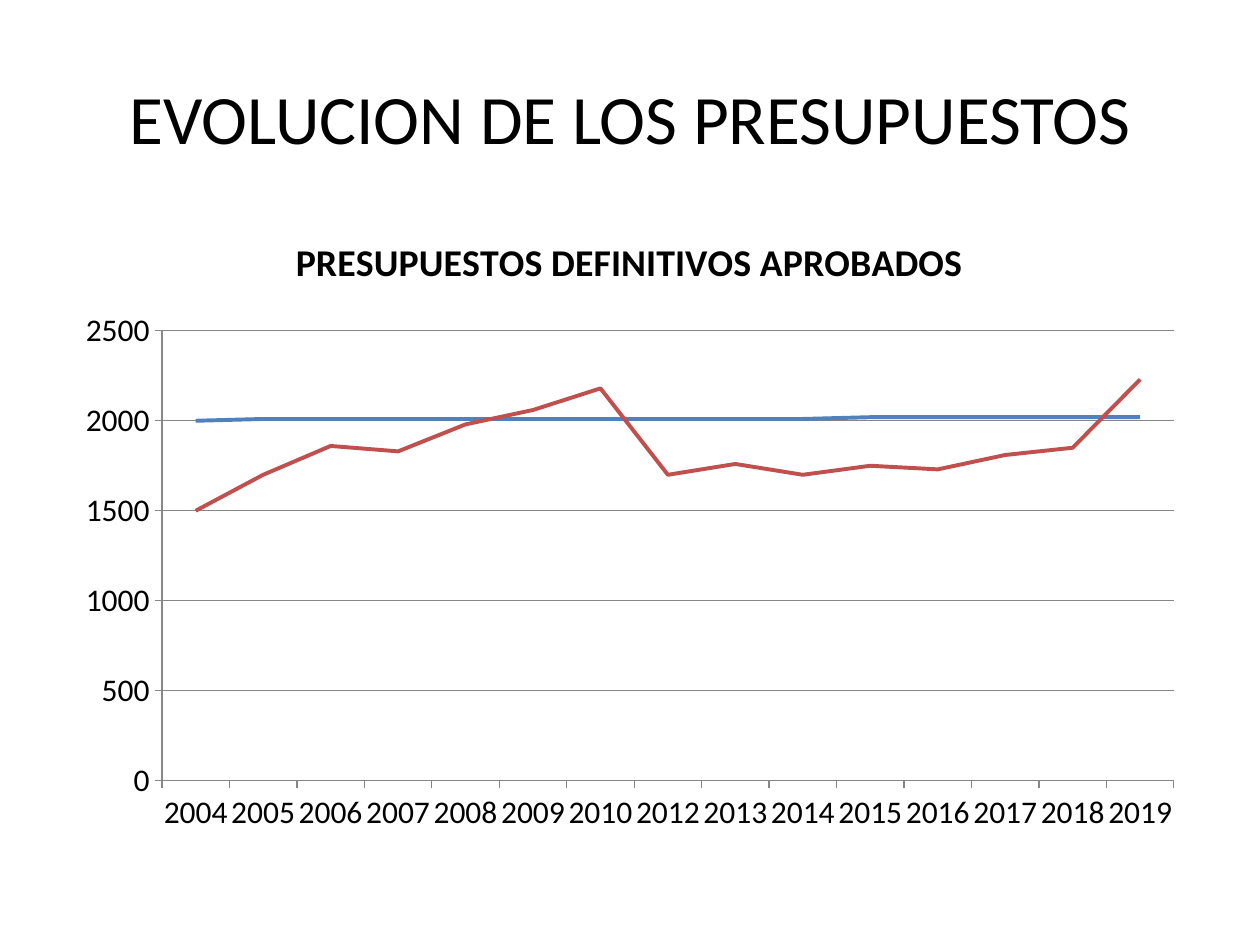
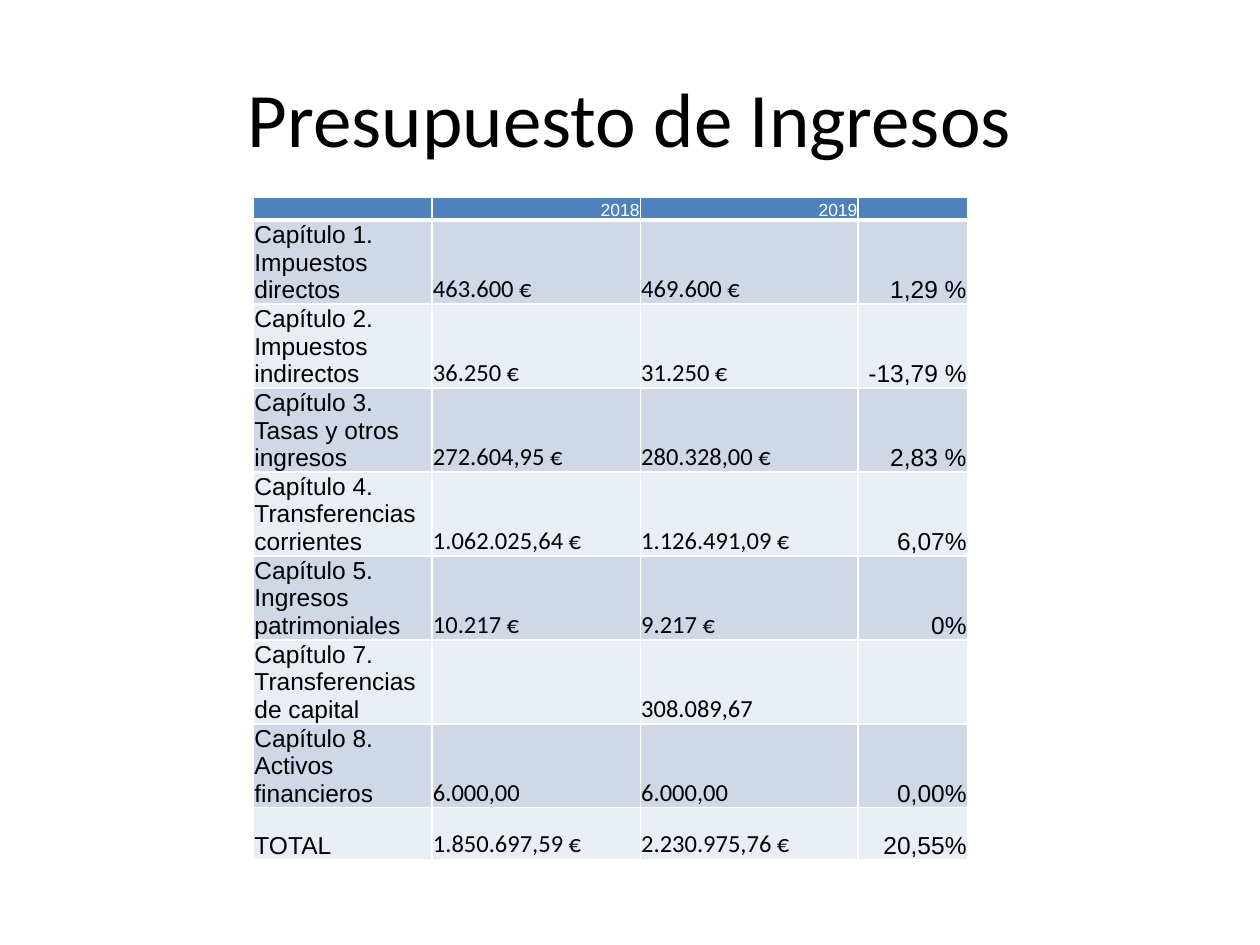
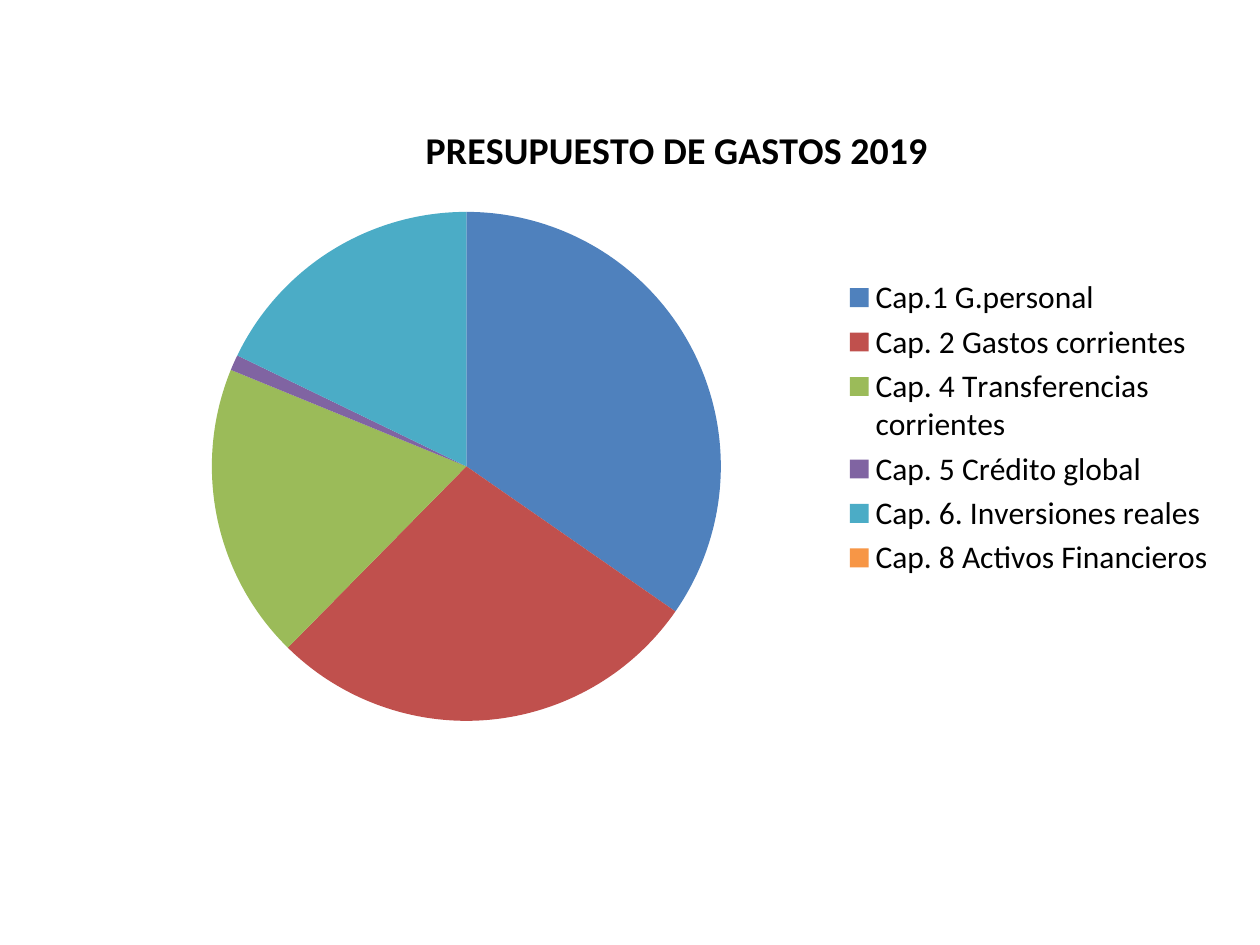
import pptx
import pptx.chart.data
import pptx.dml.color
import pptx.enum.chart
import pptx.enum.text
import pptx.util
from pptx.oxml import parse_xml
from pptx.oxml.ns import nsdecls, qn

Pt = pptx.util.Pt
KIND = pptx.enum.chart.XL_CHART_TYPE
SPOT = pptx.enum.chart.XL_LEGEND_POSITION
TICK = pptx.enum.chart.XL_TICK_MARK
ALIGN = pptx.enum.text.PP_ALIGN
ANCHOR = pptx.enum.text.MSO_ANCHOR

HUES = {
    "black": "000000", "white": "FFFFFF", "grid": "868686",
    "blue": "4F81BD", "red": "C0504D", "green": "9BBB59",
    "violet": "8064A2", "aqua": "4BACC6", "orange": "F79646",
    "dark": "D0D8E8", "light": "E9EDF4",
}
FONT = "Calibri"

TREND = {
    "title": "PRESUPUESTOS DEFINITIVOS APROBADOS",
    "years": [*range(2004, 2011), *range(2012, 2020)],
    "sums": [1500, 1700, 1860, 1830, 1980, 2060, 2180, 1700,
             1760, 1700, 1750, 1730, 1810, 1850, 2230],
    "box": (36, 126, 648, 356.4),
    "head": (165.1, 130.3),
    "plot": (92.6, 189.1, 578.3, 257.1),
}
COSTS = {
    "title": "PRESUPUESTO DE GASTOS 2019",
    "parts": [
        ("Cap.1 G.personal", 35, "blue"),
        ("Cap. 2 Gastos corrientes", 28, "red"),
        ("Cap. 4 Transferencias corrientes", 19, "green"),
        ("Cap. 5 Crédito global", 1, "violet"),
        ("Cap. 6. Inversiones reales", 18, "aqua"),
        ("Cap. 8 Activos Financieros", 0, "orange"),
    ],
    "box": (54, 66.24, 648, 356.4),
    "head": (239.4, 62.3),
    "plot": (121.1, 121.1, 290.9, 290.9),
}
INCOME = [
    ("", "2018", "2019", ""),
    ("Capítulo 1. Impuestos directos", "463.600 €", "469.600 €", "1,29 %"),
    ("Capítulo 2. Impuestos indirectos", "36.250 €", "31.250 €", "-13,79 %"),
    ("Capítulo 3. Tasas y otros ingresos", "272.604,95 €", "280.328,00 €", "2,83 %"),
    ("Capítulo 4. Transferencias corrientes", "1.062.025,64 €", "1.126.491,09 €", "6,07%"),
    ("Capítulo 5. Ingresos patrimoniales", "10.217 €", "9.217 €", "0%"),
    ("Capítulo 7. Transferencias de capital", "", "308.089,67", ""),
    ("Capítulo 8. Activos financieros", "6.000,00", "6.000,00", "0,00%"),
    ("TOTAL", "1.850.697,59 €", "2.230.975,76 €", "20,55%"),
]
COLS = [102, 119, 124.5, 62.5]
ROWS = [11.5] + [48] * 7 + [29.5]
ORIGIN = (144.9, 113)


def tint(name):
    return pptx.dml.color.RGBColor.from_string(HUES[name])


def style(font, size, hue="black", face=FONT, bold=False):
    font.size = Pt(size)
    font.name = face
    font.bold = bold
    font.color.rgb = tint(hue)


def write(para, text, *look):
    run = para.add_run()
    run.text = text
    style(run.font, *look)


def add_page(deck, text, size):
    page = deck.slides.add_slide(deck.slide_layouts[5])
    head = page.shapes.title
    head.left, head.top, head.width, head.height = map(Pt, (36, 21.6, 648, 90))
    head.text_frame.vertical_anchor = ANCHOR.MIDDLE
    para = head.text_frame.paragraphs[0]
    para.alignment = ALIGN.CENTER
    write(para, text, size)
    return page


def place(node, box, area, after=None):
    left, top, wide, high = box
    x, y, *size = area
    parts = [("x", (x - left) / wide), ("y", (y - top) / high)]
    modes = '<c:xMode val="edge"/><c:yMode val="edge"/>'
    if size:
        modes = '<c:layoutTarget val="inner"/>' + modes
        parts += [("w", size[0] / wide), ("h", size[1] / high)]
    vals = "".join(f'<c:{tag} val="{val:.4f}"/>' for tag, val in parts)
    for old in node.findall(qn("c:layout")):
        node.remove(old)
    spot = 0 if after is None else node.index(node.find(qn(after))) + 1
    node.insert(spot, parse_xml(
        f'<c:layout {nsdecls("c")}><c:manualLayout>{modes}{vals}'
        '</c:manualLayout></c:layout>'))


def add_chart(page, kind, info, cats, rows):
    data = pptx.chart.data.CategoryChartData()
    data.categories = cats
    for name, vals in rows:
        data.add_series(name, vals)
    chart = page.shapes.add_chart(kind, *map(Pt, info["box"]), data).chart
    style(chart.font, 18)
    chart.has_title = True
    para = chart.chart_title.text_frame.paragraphs[0]
    write(para, info["title"], 21.6, "black", FONT, True)
    chart.has_legend = kind == KIND.PIE
    root = chart.element.find(qn("c:chart"))
    place(root.find(qn("c:title")), info["box"], info["head"], "c:tx")
    place(root.find(qn("c:plotArea")), info["box"], info["plot"])
    return chart


def draw_trend(page):
    years = TREND["years"]
    level = [(y + 5) // 10 * 10 for y in years]
    rows = [("Series 1", level), ("Series 2", TREND["sums"])]
    chart = add_chart(page, KIND.LINE, TREND, [str(y) for y in years], rows)
    chart.plots[0].vary_by_categories = False
    for line, hue in zip(chart.series, ("blue", "red")):
        line.smooth = False
        line.format.line.color.rgb = tint(hue)
        line.format.line.width = Pt(2.25)
        line.marker.style = pptx.enum.chart.XL_MARKER_STYLE.NONE
    axis = chart.value_axis
    axis.minimum_scale, axis.maximum_scale, axis.major_unit = 0, 2500, 500
    axis.has_major_gridlines = True
    for part in (axis, chart.category_axis):
        part.major_tick_mark = TICK.OUTSIDE
        part.minor_tick_mark = TICK.NONE
    for item in (axis, chart.category_axis, axis.major_gridlines):
        item.format.line.color.rgb = tint("grid")
        item.format.line.width = Pt(0.75)


def draw_costs(page):
    names, vals, hues = zip(*COSTS["parts"])
    chart = add_chart(page, KIND.PIE, COSTS, names, [("Series 1", vals)])
    chart.plots[0].vary_by_categories = True
    chart.legend.position = SPOT.RIGHT
    chart.legend.include_in_layout = False
    for i, hue in enumerate(hues):
        fill = chart.series[0].points[i].format.fill
        fill.solid()
        fill.fore_color.rgb = tint(hue)


def set_edges(cell, base):
    props = cell._tc.get_or_add_tcPr()
    for i, side in enumerate("LRTB"):
        width = Pt(base if side == "B" else 1)
        props.insert(i, parse_xml(
            f'<a:ln{side} {nsdecls("a")} w="{width}"><a:solidFill>'
            f'<a:srgbClr val="{HUES["white"]}"/></a:solidFill></a:ln{side}>'))


def draw_income(page):
    size = (sum(COLS), sum(ROWS))
    table = page.shapes.add_table(
        len(ROWS), len(COLS), *map(Pt, ORIGIN + size)).table
    table.first_row = table.horz_banding = False
    for col, width in zip(table.columns, COLS):
        col.width = Pt(width)
    for r, (row, high) in enumerate(zip(INCOME, ROWS)):
        table.rows[r].height = Pt(high)
        band = "blue" if r == 0 else "dark" if r % 2 else "light"
        points = 14 if r else 10
        for c, text in enumerate(row):
            cell = table.cell(r, c)
            cell.fill.solid()
            cell.fill.fore_color.rgb = tint(band)
            cell.vertical_anchor = ANCHOR.BOTTOM
            cell.margin_left = cell.margin_right = cell.margin_top = Pt(0.5)
            cell.margin_bottom = Pt(0)
            para = cell.text_frame.paragraphs[0]
            para.alignment = ALIGN.RIGHT if r == 0 or c == 3 else ALIGN.LEFT
            face = FONT if r and c in (1, 2) else "Arial"
            if text:
                write(para, text, points, "black" if r else "white", face)
            else:
                para._p.append(parse_xml(
                    f'<a:endParaRPr {nsdecls("a")} sz="{points * 100}"/>'))
            set_edges(cell, 1 if r else 3)


def main():
    deck = pptx.Presentation()
    deck.slide_width, deck.slide_height = Pt(720), Pt(540)
    draw_trend(add_page(deck, "EVOLUCION DE LOS PRESUPUESTOS", 39.6))
    draw_income(add_page(deck, "Presupuesto de Ingresos", 44))
    draw_costs(deck.slides.add_slide(deck.slide_layouts[6]))
    deck.save("out.pptx")


if __name__ == "__main__":
    main()
